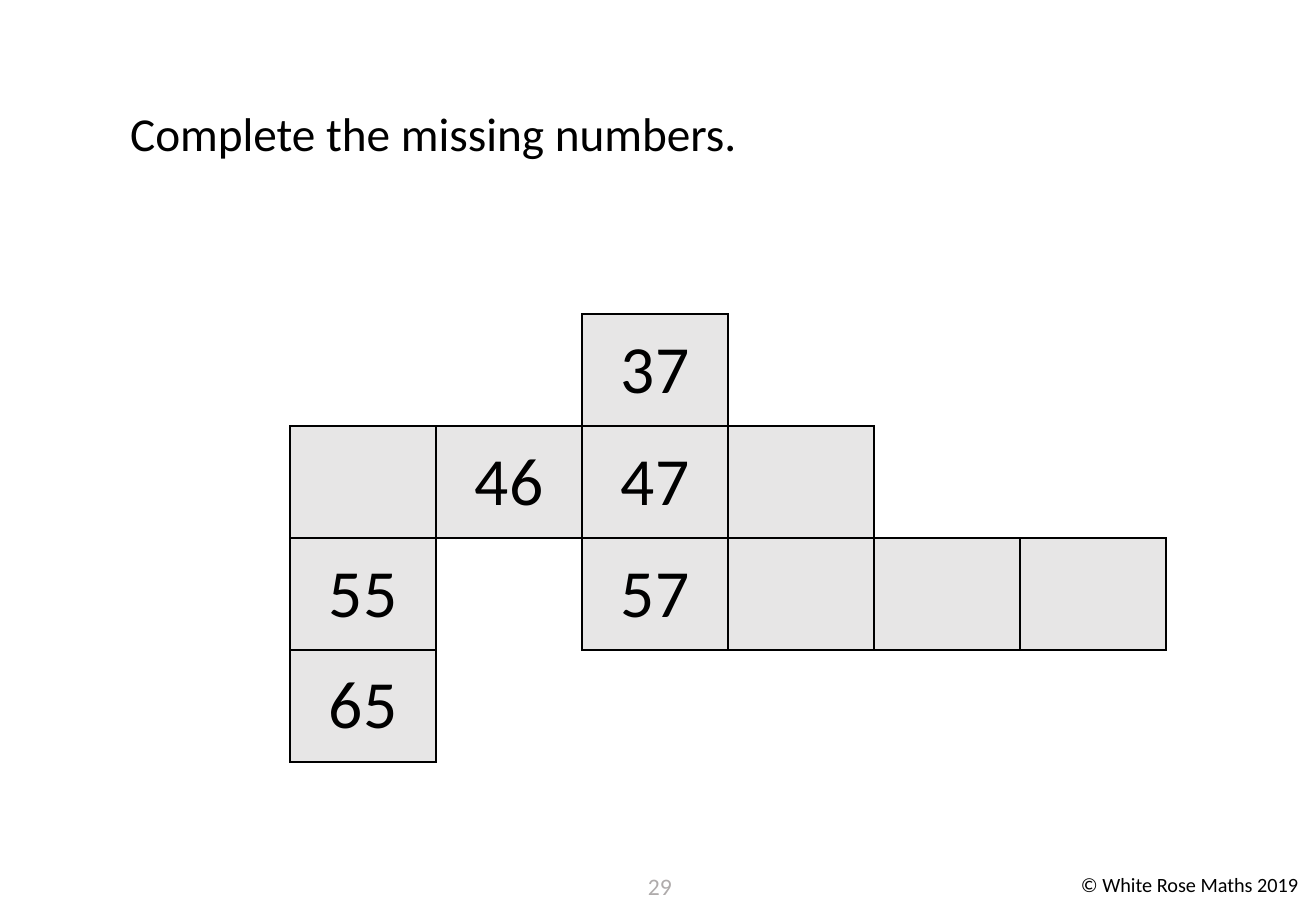
from lxml.etree import SubElement
from pptx import Presentation
from pptx.dml.color import RGBColor
from pptx.enum.text import MSO_ANCHOR as Anchor, MSO_AUTO_SIZE as AutoSize, PP_ALIGN as Align
from pptx.oxml.ns import qn
from pptx.util import Emu, Pt

SCALE = 914400 / 121.5
BLACK = RGBColor(0x00, 0x00, 0x00)
WHITE = RGBColor(0xFF, 0xFF, 0xFF)
LIGHT_GREY = RGBColor(0xE7, 0xE6, 0xE6)
MID_GREY = RGBColor(0xAF, 0xAB, 0xAB)
FONT = "Calibri"

COLUMN_WIDTH, ROW_HEIGHT = 146, 112
NUMBER_GRID = [
    [None, None, "37", None, None, None],
    ["", "46", "47", "", None, None],
    ["55", None, "57", "", "", ""],
    ["65", None, None, None, None, None],
]
SIDES = {"a:lnL": (0, -1), "a:lnR": (0, 1), "a:lnT": (-1, 0), "a:lnB": (1, 0)}


def px(length):
    return Emu(round(length * SCALE))


def write(frame, text, size, color, align=Align.LEFT):
    para = frame.paragraphs[0]
    para.alignment = align
    para.font.name = FONT
    para.font.size = Pt(size)
    para.font.color.rgb = color
    if text:
        para.add_run().text = text


def add_title(page, text, left, top, width, height):
    title = page.shapes.title
    title.left, title.top = px(left), px(top)
    title.width, title.height = px(width), px(height)
    frame = title.text_frame
    frame.auto_size = AutoSize.NONE
    frame.vertical_anchor = Anchor.TOP
    write(frame, text, 28, BLACK)


def add_label(page, text, left, top, width, height, size, color, align=Align.LEFT):
    box = page.shapes.add_textbox(px(left), px(top), px(width), px(height))
    box.text_frame.word_wrap = True
    write(box.text_frame, text, size, color, align)


def is_square(row, column):
    in_grid = 0 <= row < len(NUMBER_GRID) and 0 <= column < len(NUMBER_GRID[0])
    return in_grid and NUMBER_GRID[row][column] is not None


def set_borders(cell, row, column):
    properties = cell._tc.get_or_add_tcPr()
    for side, (down, across) in SIDES.items():
        line = SubElement(properties, qn(side), w=str(Pt(1)))
        if is_square(row, column) or is_square(row + down, column + across):
            fill = SubElement(line, qn("a:solidFill"))
            SubElement(fill, qn("a:srgbClr"), val=str(BLACK))
        else:
            SubElement(line, qn("a:noFill"))


def add_number_grid(page, left, top):
    rows, columns = len(NUMBER_GRID), len(NUMBER_GRID[0])
    table = page.shapes.add_table(
        rows, columns, px(left), px(top),
        px(columns * COLUMN_WIDTH), px(rows * ROW_HEIGHT),
    ).table
    table.first_row = False
    table.horz_banding = False
    for column in table.columns:
        column.width = px(COLUMN_WIDTH)
    for row in table.rows:
        row.height = px(ROW_HEIGHT)
    for row, numbers in enumerate(NUMBER_GRID):
        for column, number in enumerate(numbers):
            cell = table.cell(row, column)
            cell.vertical_anchor = Anchor.MIDDLE
            set_borders(cell, row, column)
            cell.fill.solid()
            cell.fill.fore_color.rgb = LIGHT_GREY if is_square(row, column) else WHITE
            write(cell.text_frame, number, 40, BLACK, Align.CENTER)


def main():
    deck = Presentation()
    deck.slide_width, deck.slide_height = px(1316), px(911)
    page = deck.slides.add_slide(deck.slide_layouts[5])
    add_title(page, "Complete the missing numbers.", 118, 98, 1070, 69)
    add_number_grid(page, 290, 314)
    add_label(page, "29", 629, 866, 62, 45, 14, MID_GREY, Align.CENTER)
    add_label(page, "© White Rose Maths 2019", 1069, 866, 247, 36, 12, BLACK)
    deck.save("out.pptx")


if __name__ == "__main__":
    main()
